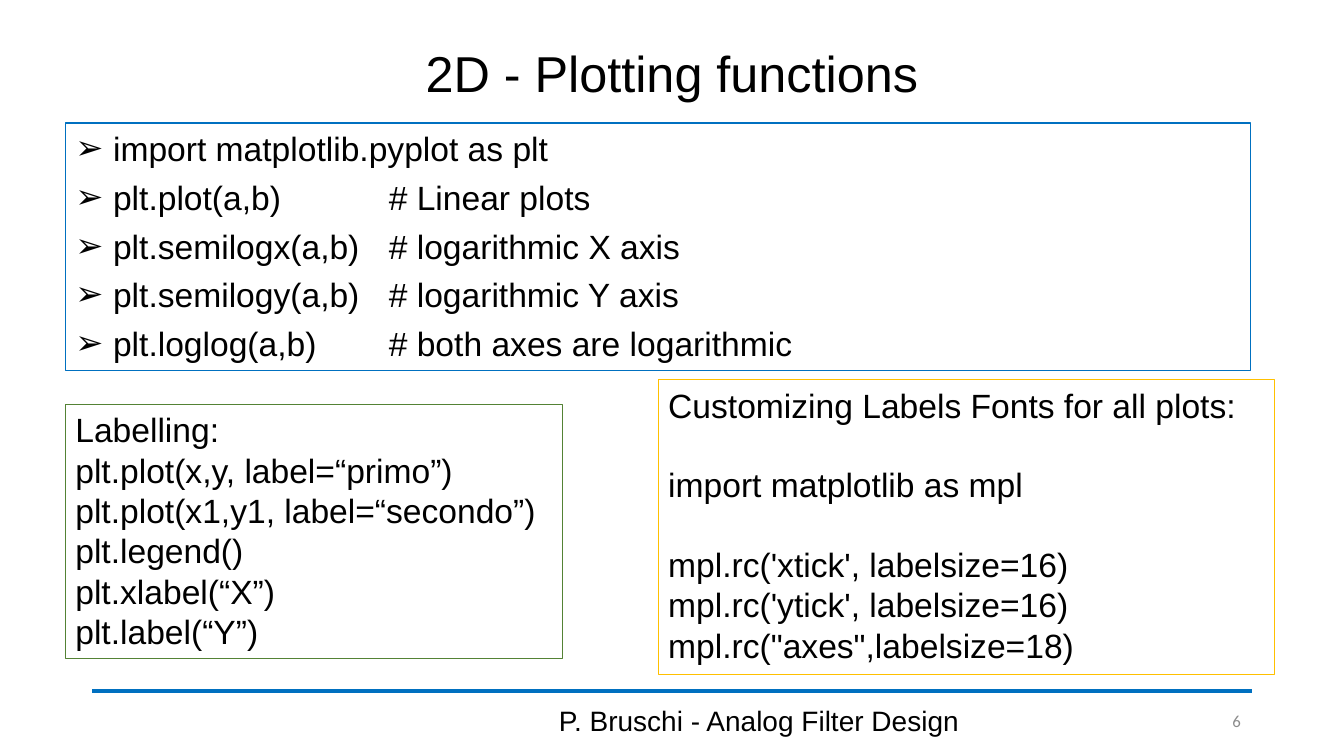
"""Build the slide on 2D plotting functions."""
import dataclasses

import lxml.etree
import pptx
import pptx.dml.color
import pptx.enum.shapes
import pptx.enum.text
import pptx.oxml.ns
import pptx.util

Cm = pptx.util.Cm
Pt = pptx.util.Pt
RGB = pptx.dml.color.RGBColor
Align = pptx.enum.text.PP_ALIGN
Anchor = pptx.enum.text.MSO_ANCHOR
qn = pptx.oxml.ns.qn

BLACK = RGB(0x00, 0x00, 0x00)
GREY = RGB(0x8C, 0x8C, 0x8C)
BLUE = RGB(0x00, 0x70, 0xC0)
GREEN = RGB(0x54, 0x82, 0x35)
GOLD = RGB(0xFF, 0xC0, 0x00)


@dataclasses.dataclass(frozen=True)
class Place:
    left: float
    top: float
    width: float
    height: float

    def cm(self) -> tuple:
        return Cm(self.left), Cm(self.top), Cm(self.width), Cm(self.height)


@dataclasses.dataclass(frozen=True)
class Style:
    size: float
    font: str = "Arial"
    color: RGB = BLACK


@dataclasses.dataclass(frozen=True)
class Panel:
    place: Place
    color: RGB
    lines: tuple[str, ...]
    bullet: bool = False
    gaps: tuple[int, ...] = ()


@dataclasses.dataclass(frozen=True)
class Label:
    place: Place
    text: str
    style: Style
    align: Align


BODY = Style(24)
LINE = 28

PANELS = (
    Panel(Place(1.65, 3.1, 29.87, 6.25), BLUE, (
        "import matplotlib.pyplot as plt",
        "plt.plot(a,b)\t# Linear plots",
        "plt.semilogx(a,b)\t# logarithmic X axis",
        "plt.semilogy(a,b)\t# logarithmic Y axis",
        "plt.loglog(a,b)\t# both axes are logarithmic",
    ), bullet=True),
    Panel(Place(1.65, 10.19, 12.52, 6.4), GREEN, (
        "Labelling:",
        "plt.plot(x,y, label=“primo”)",
        "plt.plot(x1,y1, label=“secondo”)",
        "plt.legend()",
        "plt.xlabel(“X”)",
        "plt.label(“Y”)",
    )),
    Panel(Place(16.59, 9.57, 15.52, 7.44), GOLD, (
        "Customizing Labels Fonts for all plots:",
        "import matplotlib as mpl",
        "mpl.rc('xtick', labelsize=16)",
        "mpl.rc('ytick', labelsize=16)",
        "mpl.rc(\"axes\",labelsize=18)",
    ), gaps=(1, 2)),
)

LABELS = (
    Label(Place(11.23, 17.65, 15.8, 1.02), "P. Bruschi - Analog Filter Design",
          Style(20), Align.CENTER),
    Label(Place(29.08, 17.65, 2.44, 1.02), "6",
          Style(12, "Calibri", GREY), Align.RIGHT),
)


def write(para, text: str, style: Style, align: Align = Align.LEFT) -> None:
    para.alignment = align
    run = para.add_run()
    run.text = text
    run.font.size = Pt(style.size)
    run.font.name = style.font
    run.font.color.rgb = style.color


def mark(para) -> None:
    props = para._p.get_or_add_pPr()
    props.set("marL", str(Cm(0.95)))
    props.set("indent", str(Cm(-0.95)))
    font = lxml.etree.SubElement(props, qn("a:buFont"))
    font.set("typeface", "Arial")
    sign = lxml.etree.SubElement(props, qn("a:buChar"))
    sign.set("char", "➢")
    tabs = lxml.etree.SubElement(props, qn("a:tabLst"))
    stop = lxml.etree.SubElement(tabs, qn("a:tab"))
    stop.set("pos", str(Cm(7.9)))
    stop.set("algn", "l")


def draw_panel(slide, panel: Panel) -> None:
    box = slide.shapes.add_shape(
        pptx.enum.shapes.MSO_SHAPE.RECTANGLE, *panel.place.cm())
    box.shadow.inherit = False
    box.fill.background()
    box.line.color.rgb = panel.color
    box.line.width = Pt(0.75)
    frame = box.text_frame
    frame.word_wrap = True
    frame.vertical_anchor = Anchor.TOP
    for i, text in enumerate(panel.lines):
        para = frame.add_paragraph() if i else frame.paragraphs[0]
        if panel.bullet:
            para.space_after = Pt(6)
        if i in panel.gaps:
            para.space_before = Pt(LINE)
        write(para, text, BODY)
        if panel.bullet:
            mark(para)


def draw_label(slide, label: Label) -> None:
    frame = slide.shapes.add_textbox(*label.place.cm()).text_frame
    frame.word_wrap = True
    frame.vertical_anchor = Anchor.MIDDLE
    write(frame.paragraphs[0], label.text, label.style, label.align)


def draw_title(slide) -> None:
    title = slide.shapes.title
    title.left, title.top, title.width, title.height = Place(
        2.33, 1.02, 29.21, 1.82).cm()
    frame = title.text_frame
    frame.word_wrap = True
    frame.vertical_anchor = Anchor.MIDDLE
    para = frame.paragraphs[0]
    para.line_spacing = 0.9
    write(para, "2D - Plotting functions", Style(36), Align.CENTER)


def draw_rule(slide) -> None:
    rule = slide.shapes.add_connector(
        pptx.enum.shapes.MSO_CONNECTOR.STRAIGHT,
        Cm(2.33), Cm(17.42), Cm(31.54), Cm(17.42))
    rule.line.color.rgb = BLUE
    rule.line.width = Pt(2.75)
    lxml.etree.SubElement(rule._element.spPr, qn("a:effectLst"))


def main() -> None:
    deck = pptx.Presentation()
    deck.slide_width, deck.slide_height = Cm(33.87), Cm(19.05)
    slide = deck.slides.add_slide(deck.slide_layouts[5])
    draw_rule(slide)
    draw_title(slide)
    for label in LABELS:
        draw_label(slide, label)
    for panel in PANELS:
        draw_panel(slide, panel)
    deck.save("out.pptx")


if __name__ == "__main__":
    main()
